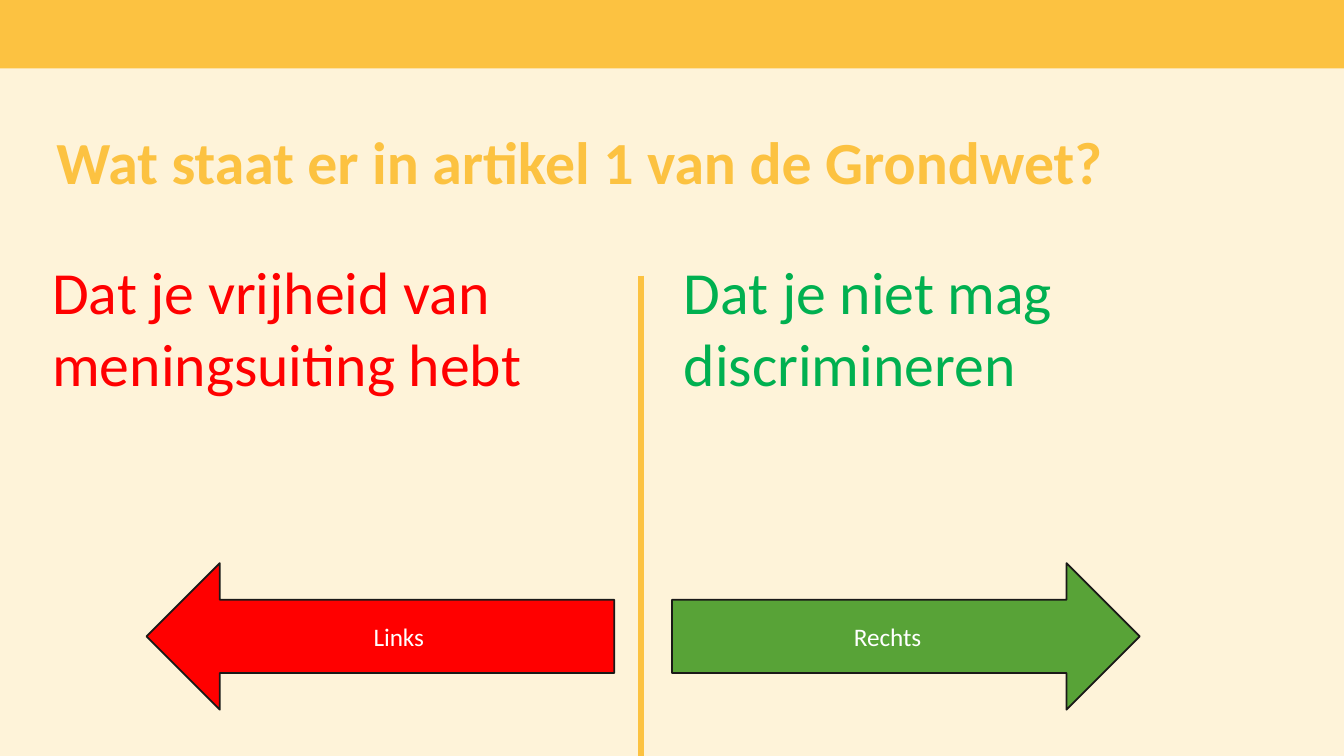
from lxml.etree import SubElement
from pptx import Presentation
from pptx.dml.color import RGBColor
from pptx.enum.shapes import MSO_CONNECTOR, MSO_SHAPE
from pptx.enum.text import MSO_ANCHOR, PP_ALIGN
from pptx.oxml.ns import qn
from pptx.util import Pt

CREAM = RGBColor(0xFE, 0xF3, 0xD9)
YELLOW = RGBColor(0xFC, 0xC2, 0x41)
RED = RGBColor(0xFF, 0x00, 0x00)
GREEN = RGBColor(0x00, 0xB0, 0x50)
LEAF = RGBColor(0x58, 0xA3, 0x37)
INK = RGBColor(0x1A, 0x19, 0x18)
WHITE = RGBColor(0xFF, 0xFF, 0xFF)

WIDTH, HEIGHT = 720, 405
ANSWER_TOP, ANSWER_HEIGHT = 133.2, 85
ARROW_TOP, ARROW_WIDTH, ARROW_HEIGHT = 301.7, 250.6, 78.5


def set_values(target, values):
    for name, value in values.items():
        setattr(target, name, value)


def write(frame, text, size, color, bold=False):
    """Put one formatted span in the frame and return its paragraph."""
    frame.word_wrap = True
    para = frame.paragraphs[0]
    span = para.add_run()
    span.text = text
    set_values(span.font, {"name": "Calibri", "size": Pt(size), "bold": bold})
    span.font.color.rgb = color
    return para


def add_filled_shape(page, kind, left, top, width, height, color):
    shape = page.shapes.add_shape(kind, Pt(left), Pt(top), Pt(width), Pt(height))
    shape.shadow.inherit = False
    shape.fill.solid()
    shape.fill.fore_color.rgb = color
    shape.line.fill.background()
    return shape


def add_text(page, left, top, width, height, text, color, bold=False):
    box = page.shapes.add_textbox(Pt(left), Pt(top), Pt(width), Pt(height))
    write(box.text_frame, text, 32, color, bold)
    return box.text_frame


def add_title(page, text):
    frame = add_text(page, 30.2, 65.5, 610.6, 70.6, text, YELLOW, bold=True)
    set_values(frame, {"margin_left": 0, "margin_right": 0, "margin_bottom": 0})
    frame.paragraphs[0].line_spacing = Pt(36)


def add_divider(page, x, top):
    line = page.shapes.add_connector(
        MSO_CONNECTOR.STRAIGHT, Pt(x), Pt(top), Pt(x), Pt(HEIGHT))
    line.line.color.rgb = YELLOW
    line.line.width = Pt(3)
    SubElement(line._element.spPr, qn("a:effectLst"))


def add_arrow(page, kind, left, text, color):
    arrow = add_filled_shape(
        page, kind, left, ARROW_TOP, ARROW_WIDTH, ARROW_HEIGHT, color)
    arrow.line.color.rgb = INK
    arrow.line.width = Pt(1)
    arrow.text_frame.vertical_anchor = MSO_ANCHOR.MIDDLE
    write(arrow.text_frame, text, 13.5, WHITE).alignment = PP_ALIGN.CENTER


def main():
    deck = Presentation()
    set_values(deck, {"slide_width": Pt(WIDTH), "slide_height": Pt(HEIGHT)})
    page = deck.slides.add_slide(deck.slide_layouts[6])
    page.background.fill.solid()
    page.background.fill.fore_color.rgb = CREAM

    add_filled_shape(page, MSO_SHAPE.RECTANGLE, 0, 0, WIDTH, 36.7, YELLOW)
    add_title(page, "Wat staat er in artikel 1 van de Grondwet?")
    add_divider(page, 343.4, 147.6)

    answers = [
        (20.9, 334, "Dat je vrijheid van meningsuiting hebt", RED),
        (359.3, 360, "Dat je niet mag discrimineren", GREEN),
    ]
    for left, width, text, color in answers:
        add_text(page, left, ANSWER_TOP, width, ANSWER_HEIGHT, text, color)

    add_arrow(page, MSO_SHAPE.LEFT_ARROW, 78.5, "Links", RED)
    add_arrow(page, MSO_SHAPE.RIGHT_ARROW, 360, "Rechts", LEAF)
    deck.save("out.pptx")


if __name__ == "__main__":
    main()
